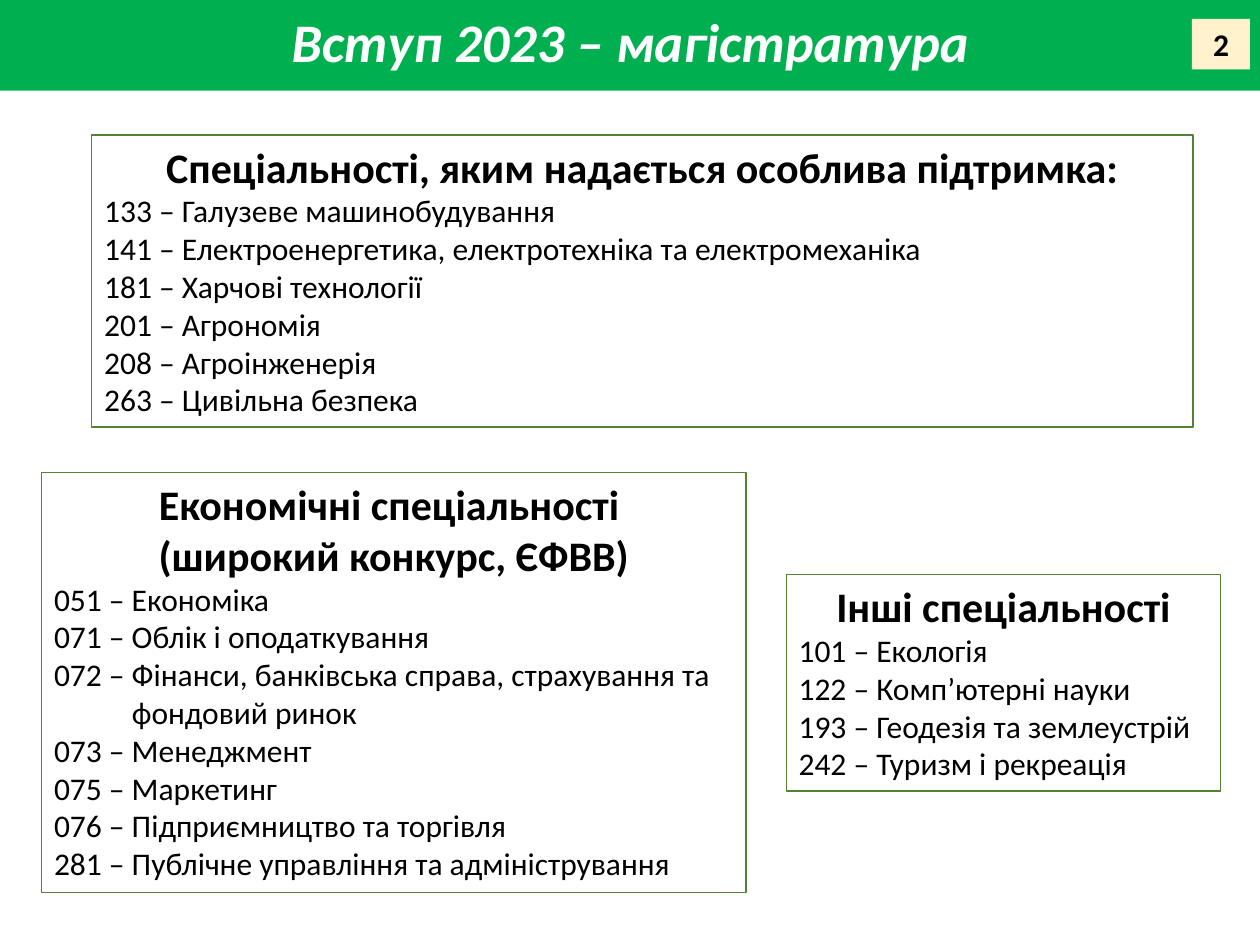
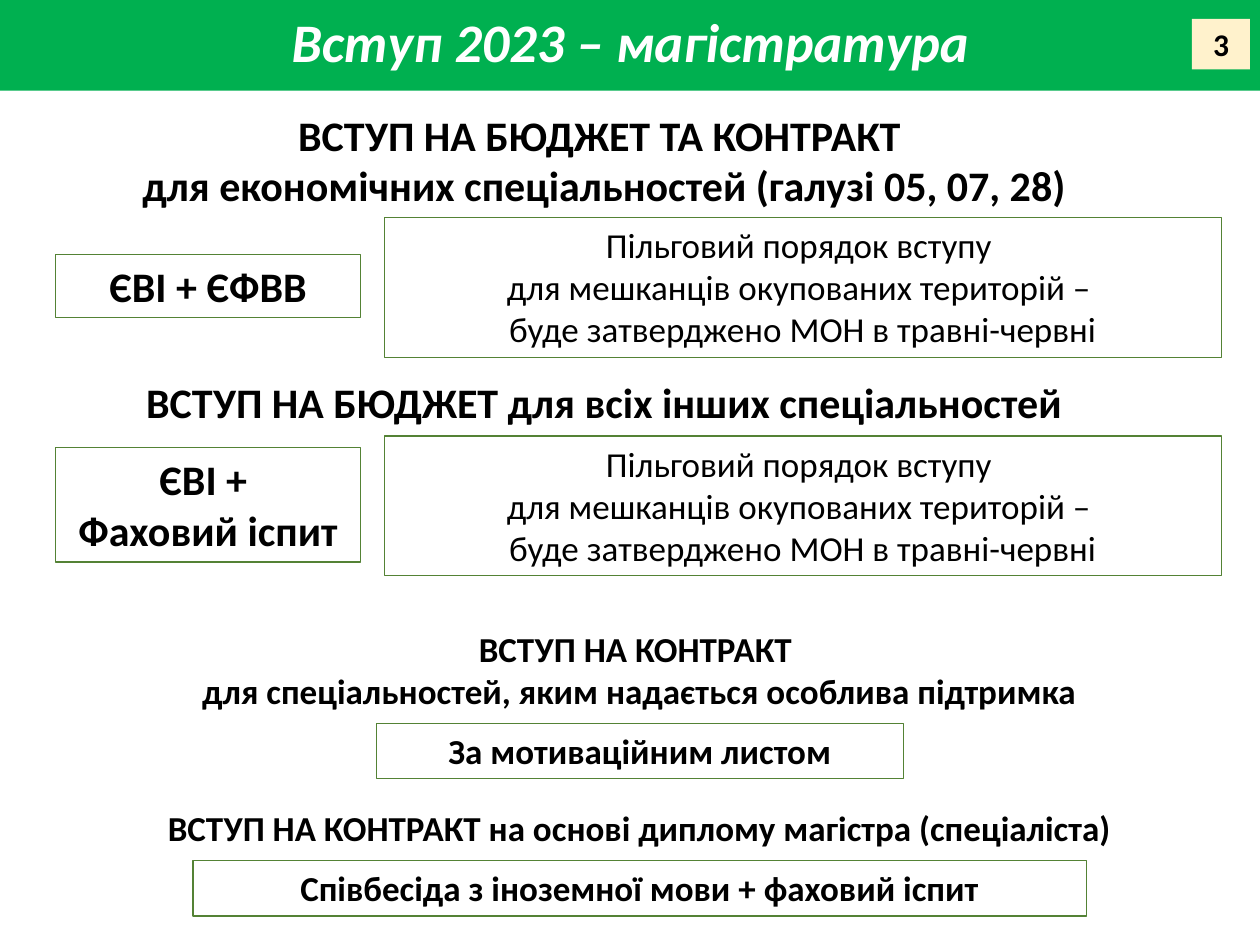
from dataclasses import dataclass

from pptx import Presentation
from pptx.dml.color import RGBColor
from pptx.enum.shapes import MSO_SHAPE
from pptx.enum.text import MSO_ANCHOR, MSO_AUTO_SIZE, PP_ALIGN
from pptx.util import Cm, Pt

SLIDE_WIDTH, SLIDE_HEIGHT = 25.4, 19.05
BLANK_LAYOUT = 6


@dataclass(frozen=True)
class Theme:
    font: str = "Calibri"
    band: RGBColor = RGBColor(0x00, 0xB0, 0x50)
    badge: RGBColor = RGBColor(0xFF, 0xF2, 0xCC)
    outline: RGBColor = RGBColor(0x54, 0x82, 0x35)
    text: RGBColor = RGBColor(0x00, 0x00, 0x00)
    light_text: RGBColor = RGBColor(0xFF, 0xFF, 0xFF)
    outline_width: float = 0.75
    title_size: int = 31
    heading_size: int = 24
    note_size: int = 20
    item_size: int = 18
    item_indent: float = 1.57


class SlideBuilder:
    """Holds the theme and draws on the current slide; lengths are in cm."""

    def __init__(self, deck, theme):
        self.deck = deck
        self.theme = theme
        self.slide = None

    def start_slide(self, title, number):
        self.slide = self.deck.slides.add_slide(self.deck.slide_layouts[BLANK_LAYOUT])
        theme = self.theme
        band = self.rectangle((0, 0, SLIDE_WIDTH, 1.83), fill=theme.band)
        band.text_frame.vertical_anchor = MSO_ANCHOR.MIDDLE
        self.set_lines(band, [title], theme.title_size, color=theme.light_text, italic=True)
        band.text_frame.paragraphs[0].line_spacing = 0.9
        badge = self.rectangle((24.03, 0.38, 1.17, 1.02), fill=theme.badge)
        self.set_lines(badge, [str(number)], theme.item_size)

    def rectangle(self, place, fill=None, outlined=False):
        box = self.slide.shapes.add_shape(MSO_SHAPE.RECTANGLE, *map(Cm, place))
        box.shadow.inherit = False
        if fill is None:
            box.fill.background()
        else:
            box.fill.solid()
            box.fill.fore_color.rgb = fill
        if outlined:
            box.line.color.rgb = self.theme.outline
            box.line.width = Pt(self.theme.outline_width)
        else:
            box.line.fill.background()
        box.text_frame.vertical_anchor = MSO_ANCHOR.TOP
        return box

    def set_lines(self, box, lines, size, bold=True, italic=False, color=None):
        """Fill a box with centred lines, one paragraph each."""
        frame = box.text_frame
        frame.word_wrap = True
        frame.text = "\n".join(lines)
        for para in frame.paragraphs:
            para.alignment = PP_ALIGN.CENTER
            self.format_runs(para, size, bold, italic, color)

    def format_runs(self, para, size, bold, italic=False, color=None):
        for span in para.runs:
            span.font.name = self.theme.font
            span.font.size = Pt(size)
            span.font.bold = bold
            span.font.italic = italic
            span.font.color.rgb = color or self.theme.text

    def heading(self, place, lines, size):
        box = self.slide.shapes.add_textbox(*map(Cm, place))
        self.set_lines(box, lines, size)
        box.text_frame.auto_size = MSO_AUTO_SIZE.SHAPE_TO_FIT_TEXT

    def framed_text(self, place, lines, size, bold=True):
        box = self.rectangle(place, outlined=True)
        self.set_lines(box, lines, size, bold)
        box.text_frame.auto_size = MSO_AUTO_SIZE.SHAPE_TO_FIT_TEXT
        return box

    def speciality_list(self, place, heading, specialities):
        """Framed heading above coded names with a hanging indent."""
        box = self.framed_text(place, heading, self.theme.heading_size)
        indent = Cm(self.theme.item_indent)
        for code, name in specialities.items():
            para = box.text_frame.add_paragraph()
            para.text = f"{code} – {name}"
            para.alignment = PP_ALIGN.LEFT
            properties = para._p.get_or_add_pPr()
            properties.set("marL", str(indent))
            properties.set("indent", str(-indent))
            self.format_runs(para, self.theme.item_size, bold=False)


TITLE = "Вступ 2023 – магістратура"

SUPPORTED = {
    "133": "Галузеве машинобудування",
    "141": "Електроенергетика, електротехніка та електромеханіка",
    "181": "Харчові технології",
    "201": "Агрономія",
    "208": "Агроінженерія",
    "263": "Цивільна безпека",
}
ECONOMIC = {
    "051": "Економіка",
    "071": "Облік і оподаткування",
    "072": "Фінанси, банківська справа, страхування та фондовий ринок",
    "073": "Менеджмент",
    "075": "Маркетинг",
    "076": "Підприємництво та торгівля",
    "281": "Публічне управління та адміністрування",
}
OTHER = {
    "101": "Екологія",
    "122": "Комп’ютерні науки",
    "193": "Геодезія та землеустрій",
    "242": "Туризм і рекреація",
}
BENEFIT = [
    "Пільговий порядок вступу ",
    "для мешканців окупованих територій – ",
    "буде затверджено МОН в травні-червні",
]


def add_specialities_slide(builder):
    builder.start_slide(TITLE, 2)
    builder.speciality_list(
        (1.85, 2.72, 22.2, 5.89),
        ["Спеціальності, яким надається особлива підтримка:"], SUPPORTED)
    builder.speciality_list(
        (0.84, 9.53, 14.2, 8.46),
        ["Економічні спеціальності ", "(широкий конкурс, ЄФВВ)"], ECONOMIC)
    builder.speciality_list(
        (15.85, 11.58, 8.76, 4.37), ["Інші спеціальності"], OTHER)


def add_admission_slide(builder):
    builder.start_slide(TITLE, 3)
    large, small = builder.theme.heading_size, builder.theme.note_size
    heading_width = 22.12

    budget_routes = [
        (2.08, 2.31, ["ВСТУП НА БЮДЖЕТ ТА КОНТРАКТ ",
                      "для економічних спеціальностей (галузі 05, 07, 28)"],
         5.13, 1.27, ["ЄВІ + ЄФВВ"], 4.39),
        (7.47, 1.27, ["ВСТУП НА БЮДЖЕТ для всіх інших спеціальностей"],
         9.02, 2.31, ["ЄВІ + ", "Фаховий іспит"], 8.79),
    ]
    for top, height, heading, exam_top, exam_height, exams, benefit_top in budget_routes:
        builder.heading((1.12, top, heading_width, height), heading, large)
        builder.framed_text((1.12, exam_top, 6.15, exam_height), exams, large)
        builder.framed_text((7.75, benefit_top, 16.87, 2.82), BENEFIT, small, bold=False)

    contract_routes = [
        (12.52, 1.96, ["ВСТУП НА КОНТРАКТ ",
                       "для спеціальностей, яким надається особлива підтримка"],
         (7.59, 14.58, 10.62, 1.12), "За мотиваційним листом"),
        (16.13, 1.12, ["ВСТУП НА КОНТРАКТ на основі диплому магістра (спеціаліста)"],
         (3.89, 17.35, 18.01, 1.12), "Співбесіда з іноземної мови + фаховий іспит"),
    ]
    for top, height, heading, place, requirement in contract_routes:
        builder.heading((1.83, top, heading_width, height), heading, small)
        builder.framed_text(place, [requirement], small)


def main():
    deck = Presentation()
    deck.slide_width, deck.slide_height = Cm(SLIDE_WIDTH), Cm(SLIDE_HEIGHT)
    builder = SlideBuilder(deck, Theme())
    add_specialities_slide(builder)
    add_admission_slide(builder)
    deck.save("out.pptx")


if __name__ == "__main__":
    main()
